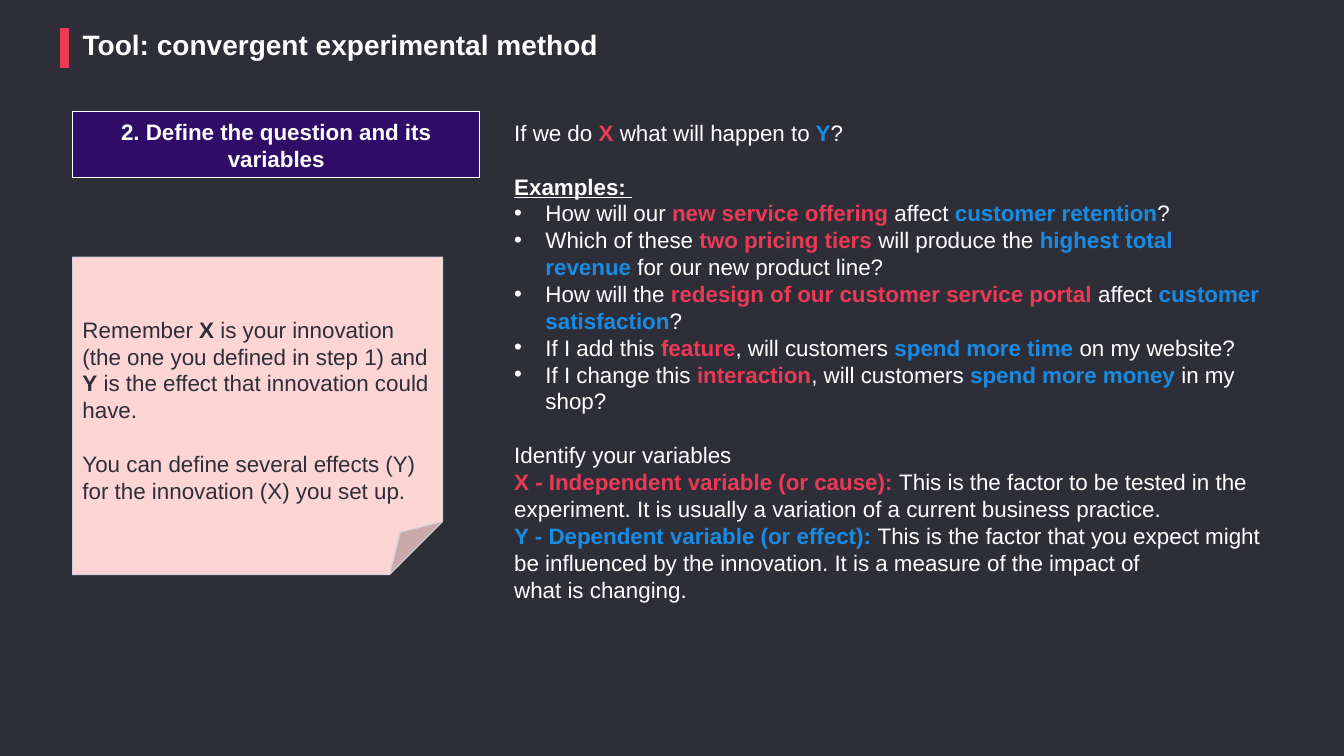
from lxml import etree
from pptx import Presentation
from pptx import util as u
from pptx.dml.color import RGBColor
from pptx.enum import shapes, text
from pptx.oxml.ns import qn

WIDTH, HEIGHT = 13.33, 7.5
LEFT = 0.72
INDENT = 0.31
LEADING = 1.2
BODY_SIZE = 16
COLORS = {
    "background": "2E2E38",
    "white": "FFFFFF",
    "cause": "EA3A55",
    "effect": "188CE5",
    "header": "2E0C67",
    "note": "FCD5D4",
    "note_line": "D2D2DA",
}
STYLES = {
    "plain": {"bold": False},
    "strong": {"bold": True},
    "heading": {"bold": True, "underline": True},
    "cause": {"bold": True},
    "effect": {"bold": True},
}
FRAME = {
    "word_wrap": True,
    "auto_size": text.MSO_AUTO_SIZE.NONE,
    "margin_left": u.Inches(0.1),
    "margin_right": u.Inches(0.1),
    "margin_top": u.Inches(0.05),
    "margin_bottom": u.Inches(0.05),
}

QUESTION = [("If we do ", "plain"), ("X", "cause"),
            (" what will happen to", "plain"), (" Y", "effect"), ("?", "plain")]
EXAMPLES = [
    ("How will our ", "new service offering", " affect ", "customer retention", "?"),
    ("Which of these ", "two pricing tiers ", "will produce the ",
     "highest total revenue ", "for our new product line?"),
    ("How will the ", "redesign of our customer service portal ", "affect ",
     "customer satisfaction", "?"),
    ("If I add this ", "feature", ", will customers ", "spend more time ",
     "on my website?"),
    ("If I change this ", "interaction", ", will customers ", "spend more money ",
     "in my shop?"),
]
EXAMPLE_STYLES = ("plain", "cause", "plain", "effect", "plain")
VARIABLES = [
    [("X - Independent variable (or cause): ", "cause"),
     ("This is the factor to be tested in the experiment. "
      "It is usually a variation of a current business practice.", "plain")],
    [("Y - Dependent variable (or effect): ", "effect"),
     ("This is the factor that you expect might be influenced by the innovation. "
      "It is a measure of the impact of", "plain")],
    [("what is changing.", "plain")],
]
REMINDER = [
    [("Remember ", "plain"), ("X", "strong"),
     (" is your innovation (the one you defined in step 1) and ", "plain"),
     ("Y", "strong"), (" is the effect that innovation could have.", "plain")],
    [("You can define several effects (Y) for the innovation (X) you set up.", "plain")],
]


def rgb(name):
    return RGBColor.from_string(COLORS[name])


def apply(target, values):
    for name, value in values.items():
        setattr(target, name, value)


def place(shape, box):
    apply(shape, dict(zip(("left", "top", "width", "height"), map(u.Inches, box))))


def set_bullet(para, bulleted):
    props = para._p.get_or_add_pPr()
    indent = u.Inches(INDENT) if bulleted else 0
    props.set("marL", str(indent))
    props.set("indent", str(-indent))
    if bulleted:
        etree.SubElement(props, qn("a:buFont")).set("typeface", "Arial")
        etree.SubElement(props, qn("a:buChar")).set("char", "•")
    else:
        etree.SubElement(props, qn("a:buNone"))


def write(frame, paragraphs, size=BODY_SIZE, color="white", gaps=(), bullets=(),
          align=text.PP_ALIGN.LEFT, anchor=text.MSO_ANCHOR.TOP):
    apply(frame, {**FRAME, "vertical_anchor": anchor})
    for index, spans in enumerate(paragraphs):
        para = frame.add_paragraph() if index else frame.paragraphs[0]
        set_bullet(para, index in bullets)
        apply(para, {
            "alignment": align,
            "line_spacing": u.Pt(size * LEADING),
            "space_before": u.Pt(size * LEADING if index in gaps else 0),
            "space_after": u.Pt(0),
        })
        for words, style in spans:
            span = para.add_run()
            span.text = words
            apply(span.font, {"name": "Arial", "size": u.Pt(size), **STYLES[style]})
            span.font.color.rgb = rgb(style if style in COLORS else color)


def add_panel(page, kind, box, fill, line):
    panel = page.shapes.add_shape(kind, *map(u.Inches, box))
    panel.shadow.inherit = False
    panel.fill.solid()
    panel.fill.fore_color.rgb = rgb(fill)
    panel.line.color.rgb = rgb(line)
    panel.line.width = u.Pt(0.75)
    return panel.text_frame


def add_title(page, box):
    left, top, width, height = box
    bar = page.shapes.add_connector(
        shapes.MSO_CONNECTOR.STRAIGHT,
        *map(u.Inches, (left - 0.08, top + 0.06, left - 0.08, top + height + 0.01)))
    bar.line.color.rgb = rgb("cause")
    bar.line.width = u.Pt(6)
    etree.SubElement(bar._element.spPr, qn("a:effectLst"))
    title = page.shapes.title
    place(title, box)
    write(title.text_frame, [[("Tool: convergent experimental method", "strong")]], size=20)


def add_step(page, box):
    frame = add_panel(page, shapes.MSO_SHAPE.RECTANGLE, box, "header", "white")
    write(frame, [[("2. Define the question and its variables", "strong")]],
          align=text.PP_ALIGN.CENTER, anchor=text.MSO_ANCHOR.MIDDLE)


def add_explanation(page, box):
    body = page.placeholders[1]
    place(body, box)
    examples = [list(zip(words, EXAMPLE_STYLES)) for words in EXAMPLES]
    opening = [QUESTION, [("Examples: ", "heading")]]
    first, last = len(opening), len(opening) + len(examples)
    closing = [[("Identify your variables", "plain")], *VARIABLES]
    write(body.text_frame, opening + examples + closing,
          gaps=(1, last), bullets=range(first, last))


def add_note(page, box):
    frame = add_panel(page, shapes.MSO_SHAPE.FOLDED_CORNER, box, "note", "note_line")
    write(frame, REMINDER, color="background", gaps=(1,))
    frame.margin_top += u.Pt(2 * BODY_SIZE * LEADING)


def main():
    deck = Presentation()
    deck.slide_width, deck.slide_height = u.Inches(WIDTH), u.Inches(HEIGHT)
    page = deck.slides.add_slide(deck.slide_layouts[1])
    page.background.fill.solid()
    page.background.fill.fore_color.rgb = rgb("background")
    add_title(page, (LEFT, 0.22, 7.78, 0.44))
    add_step(page, (LEFT, 1.11, 4.04, 0.65))
    add_explanation(page, (5, 1.13, 7.62, 4.95))
    add_note(page, (LEFT, 2.55, 3.67, 3.15))
    deck.save("out.pptx")


if __name__ == "__main__":
    main()
